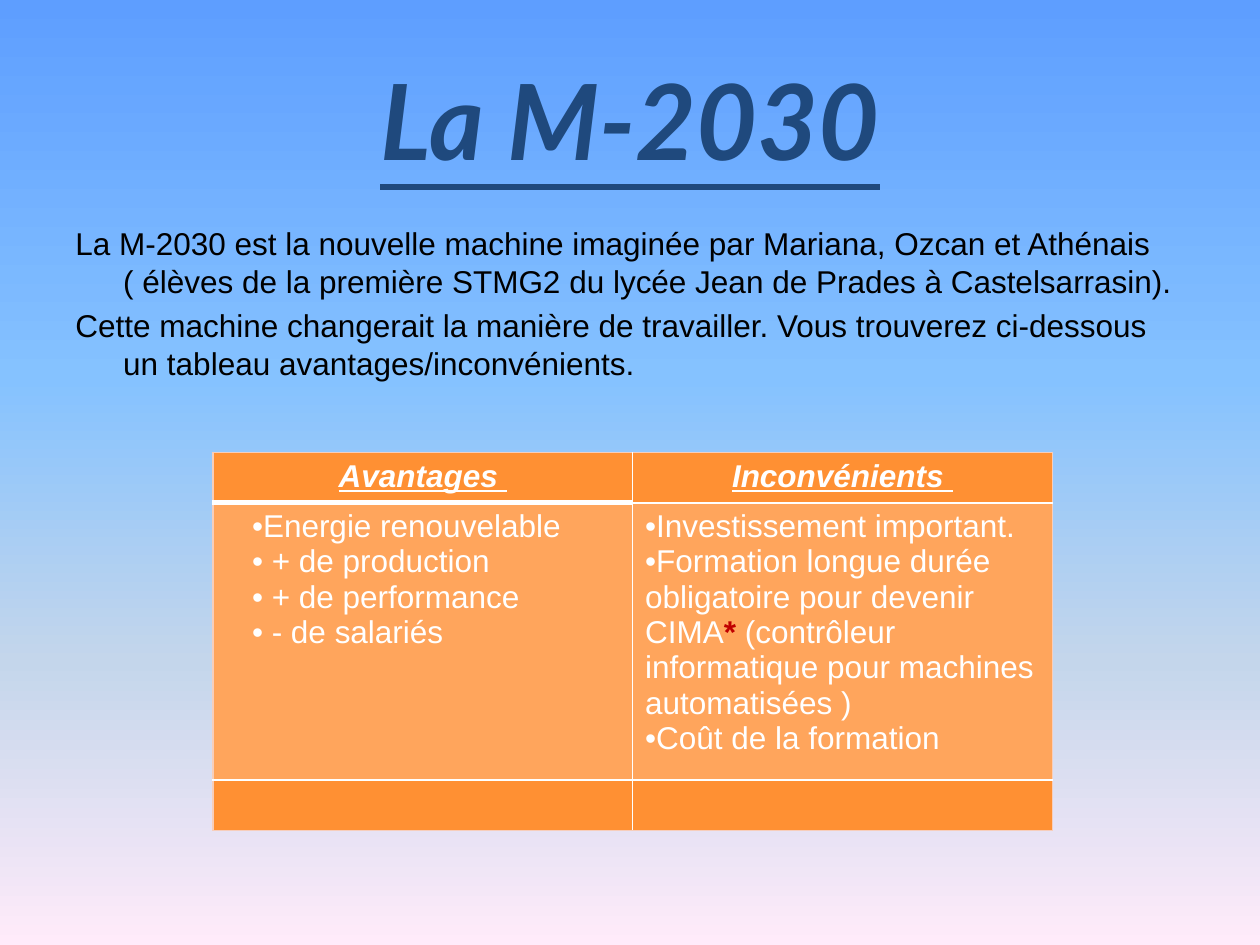
from pptx import Presentation as Deck
from pptx.dml.color import RGBColor as Rgb
from pptx.enum.text import MSO_ANCHOR as Anchor, PP_ALIGN as Align
from pptx.oxml import parse_xml as to_xml
from pptx.oxml.ns import nsdecls as names, qn
from pptx.util import Inches as Inch, Pt

WIDE, HIGH = 10, 7.5
EDGE = "F7CEBB"
SKY = [(0, "5E9EFF"), (40, "85C2FF"), (70, "C4D6EB"), (100, "FFEBFA")]
BASE = {"name": "Arial", "size": Pt(18)}
HEAD = {**BASE, "bold": True, "italic": True, "underline": True}
TITLE = {**HEAD, "name": "Lato", "size": Pt(60)}
MARK = {**BASE, "bold": True}

INTRO = [
    "La M-2030 est la nouvelle machine imaginée par Mariana, Ozcan et Athénais "
    "( élèves de la première STMG2 du lycée Jean de Prades à Castelsarrasin).",
    "Cette machine changerait la manière de travailler. Vous trouverez ci-dessous "
    "un tableau avantages/inconvénients.",
]
PROS = ["•Energie renouvelable", "• + de production",
        "• + de performance", "• - de salariés"]
CONS = ["•Investissement important.",
        "•Formation longue durée obligatoire pour devenir CIMA*"
        " (contrôleur informatique pour machines automatisées )",
        "•Coût de la formation"]


def paint(target, code):
    target.rgb = Rgb.from_string(code)


def style(font, look, code):
    for key, value in look.items():
        setattr(font, key, value)
    paint(font.color, code)


def add_run(para, text, look, code):
    run = para.add_run()
    run.text = text
    style(run.font, look, code)


def write(frame, lines, look, code, align=Align.LEFT):
    for i, line in enumerate(lines):
        para = frame.add_paragraph() if i else frame.paragraphs[0]
        para.alignment = align
        start, star, rest = line.partition("*")
        add_run(para, start, look, code)
        if star:
            add_run(para, star, MARK, "C00000")
            add_run(para, rest, look, code)


def indent(para, left, first=0):
    props = para._p.get_or_add_pPr()
    props.set("marL", str(Inch(left)))
    props.set("indent", str(Inch(first)))


def add_box(slide, top, high, anchor):
    box = slide.shapes.add_textbox(
        Inch(WIDE * 0.05), Inch(HIGH * top), Inch(WIDE * 0.9), Inch(HIGH * high))
    frame = box.text_frame
    frame.word_wrap = True
    frame.vertical_anchor = anchor
    return frame


def add_sky(slide):
    fill = slide.background.fill
    fill.gradient()
    fill.gradient_angle = 270
    stops = slide.element.find(".//" + qn("a:gsLst"))
    for stop in list(stops):
        stops.remove(stop)
    for share, code in SKY:
        stops.append(to_xml(
            f'<a:gs {names("a")} pos="{share * 1000}"><a:srgbClr val="{code}"/></a:gs>'))


def add_edge(cell, side, code=EDGE, width=0.75):
    props = cell._tc.get_or_add_tcPr()
    rank = sum(item.tag.startswith(qn("a:ln")) for item in props)
    props.insert(rank, to_xml(
        f'<a:ln{side} {names("a")} w="{Pt(width)}"><a:solidFill>'
        f'<a:srgbClr val="{code}"/></a:solidFill></a:ln{side}>'))


def add_grid(slide):
    rows, cols = [0.38, 2.05, 0.38], [3.33, 3.33]
    grid = slide.shapes.add_table(
        len(rows), len(cols), Inch(1.69), Inch(3.59),
        Inch(sum(cols)), Inch(sum(rows))).table
    for col, size in zip(grid.columns, cols):
        col.width = Inch(size)
    for i, size in enumerate(rows):
        grid.rows[i].height = Inch(size)
        for j in range(len(cols)):
            cell = grid.cell(i, j)
            cell.fill.solid()
            paint(cell.fill.fore_color, "FFA55C" if i == 1 else "FF9033")
            style(cell.text_frame.paragraphs[0].font, BASE, "FFFFFF")
            add_edge(cell, "R" if j else "L")
            if i == 0:
                add_edge(cell, "T")
            if i == 2:
                add_edge(cell, "B")
    add_edge(grid.cell(0, 0), "B", "FFFFFF", 3)
    return grid


def fill_grid(grid):
    for j, (head, lines) in enumerate([("Avantages ", PROS), ("Inconvénients ", CONS)]):
        write(grid.cell(0, j).text_frame, [head], HEAD, "FFFFFF", Align.CENTER)
        plain = {**BASE, "bold": False}
        write(grid.cell(1, j).text_frame, lines, plain, "FFFFFF")
    for para in grid.cell(1, 0).text_frame.paragraphs:
        indent(para, 0.21)


def main():
    deck = Deck()
    deck.slide_width, deck.slide_height = Inch(WIDE), Inch(HIGH)
    slide = deck.slides.add_slide(deck.slide_layouts[6])
    add_sky(slide)
    title = add_box(slide, 0.04, 0.17, Anchor.MIDDLE)
    write(title, ["La M-2030"], TITLE, "1F497D", Align.CENTER)
    intro = add_box(slide, 0.23, 0.66, Anchor.TOP)
    write(intro, INTRO, BASE, "000000")
    for para in intro.paragraphs:
        indent(para, 0.38, -0.38)
        para.space_before = Pt(3.6)
        para.line_spacing = Pt(21.7)
    fill_grid(add_grid(slide))
    deck.save("out.pptx")


if __name__ == "__main__":
    main()
